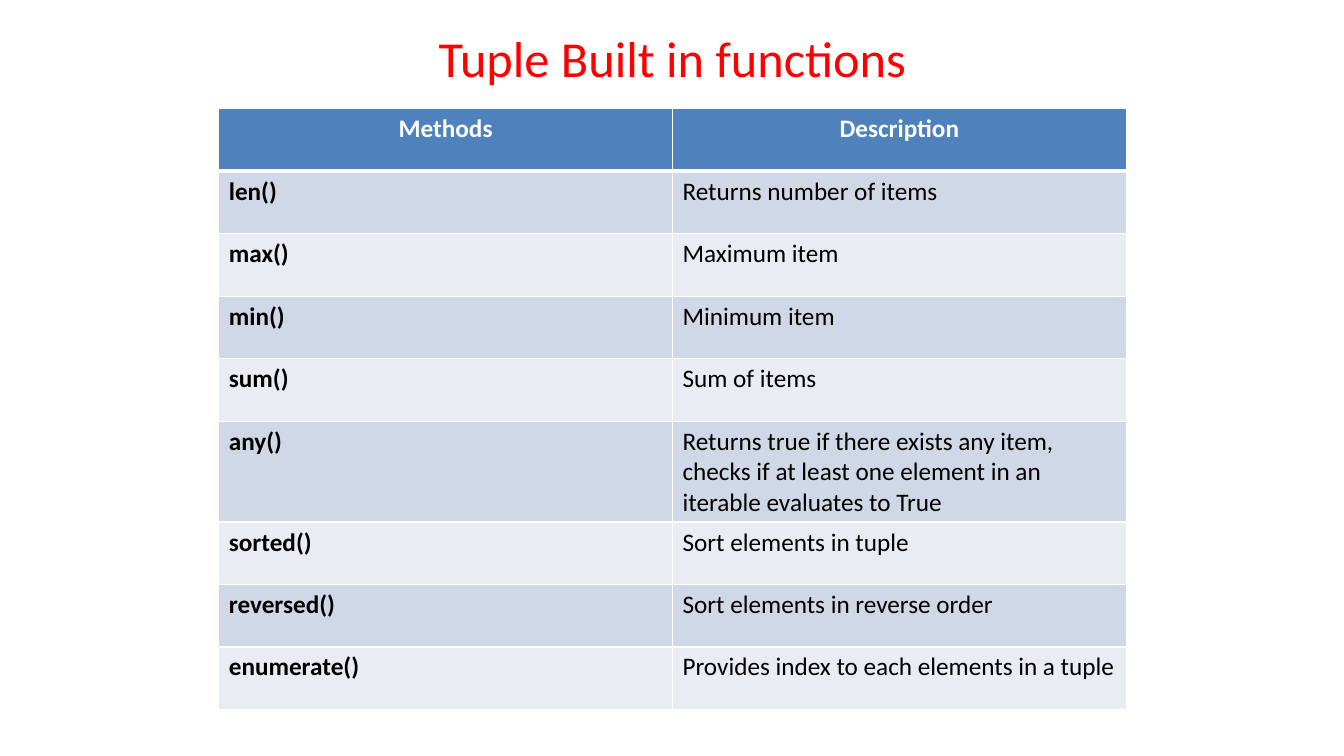
import pptx
import pptx.dml.color
import pptx.enum.text
import pptx.oxml.ns
import pptx.util
from lxml import etree

Inches = pptx.util.Inches
RGBColor = pptx.dml.color.RGBColor
ALIGN = pptx.enum.text.PP_ALIGN

RED = RGBColor(0xFF, 0x00, 0x00)
WHITE = RGBColor(0xFF, 0xFF, 0xFF)
BLACK = RGBColor(0x00, 0x00, 0x00)
HEADER_BLUE = RGBColor(0x4F, 0x81, 0xBD)
BAND_DARK = RGBColor(0xD0, 0xD8, 0xE7)
BAND_LIGHT = RGBColor(0xE9, 0xEC, 0xF3)

FONT = "Calibri"
THIN, THICK = 0.96, 3

ROWS = [
    ("Methods", "Description"),
    ("len()", "Returns number of items"),
    ("max()", "Maximum item"),
    ("min()", "Minimum item"),
    ("sum()", "Sum of items"),
    ("any()", "Returns true if there exists any item, checks if at least "
              "one element in an iterable evaluates to True"),
    ("sorted()", "Sort elements in tuple"),
    ("reversed()", "Sort elements in reverse order"),
    ("enumerate()", "Provides index to each elements in a tuple"),
]


def add_text(paragraph, text, size, color, bold=False, align=ALIGN.LEFT):
    paragraph.alignment = align
    run = paragraph.add_run()
    run.text = text
    run.font.name = FONT
    run.font.size = pptx.util.Pt(size)
    run.font.bold = bold
    run.font.color.rgb = color


def set_borders(cell, top, bottom):
    """Draw white cell borders; top and bottom are widths in points."""
    properties = cell._tc.get_or_add_tcPr()
    widths = {"a:lnL": THIN, "a:lnR": THIN, "a:lnT": top, "a:lnB": bottom}
    for tag, width in widths.items():
        line = etree.SubElement(properties, pptx.oxml.ns.qn(tag),
                                w=str(pptx.util.Pt(width)))
        fill = etree.SubElement(line, pptx.oxml.ns.qn("a:solidFill"))
        etree.SubElement(fill, pptx.oxml.ns.qn("a:srgbClr"), val=str(WHITE))


def add_title(slide, left, top, width, height):
    title = slide.shapes.add_textbox(left, top, width, height)
    frame = title.text_frame
    frame.word_wrap = True
    frame.vertical_anchor = pptx.enum.text.MSO_ANCHOR.MIDDLE
    add_text(frame.paragraphs[0], "Tuple Built in functions", 36, RED,
             align=ALIGN.CENTER)


def add_function_table(slide, left, top, width, row_height):
    columns = len(ROWS[0])
    table = slide.shapes.add_table(len(ROWS), columns, left, top, width,
                                   row_height * len(ROWS)).table
    for column in table.columns:
        column.width = width // columns

    for row_index, texts in enumerate(ROWS):
        table.rows[row_index].height = row_height
        header = row_index == 0
        band = BAND_DARK if row_index % 2 else BAND_LIGHT
        for column_index, text in enumerate(texts):
            cell = table.cell(row_index, column_index)
            set_borders(cell, top=THICK if row_index == 1 else THIN,
                        bottom=THICK if header else THIN)
            cell.fill.solid()
            cell.fill.fore_color.rgb = HEADER_BLUE if header else band
            add_text(cell.text_frame.paragraphs[0], text, 18,
                     WHITE if header else BLACK,
                     bold=header or column_index == 0,
                     align=ALIGN.CENTER if header else ALIGN.LEFT)


def main():
    presentation = pptx.Presentation()
    presentation.slide_width = Inches(13.33)
    presentation.slide_height = Inches(7.5)
    slide = presentation.slides.add_slide(presentation.slide_layouts[6])

    # Title and table share one column
    left, width = Inches(2.17), Inches(9)
    add_title(slide, left, Inches(0.3), width, Inches(0.53))
    add_function_table(slide, left, Inches(1.08), width, Inches(0.62))

    presentation.save("out.pptx")


if __name__ == "__main__":
    main()
